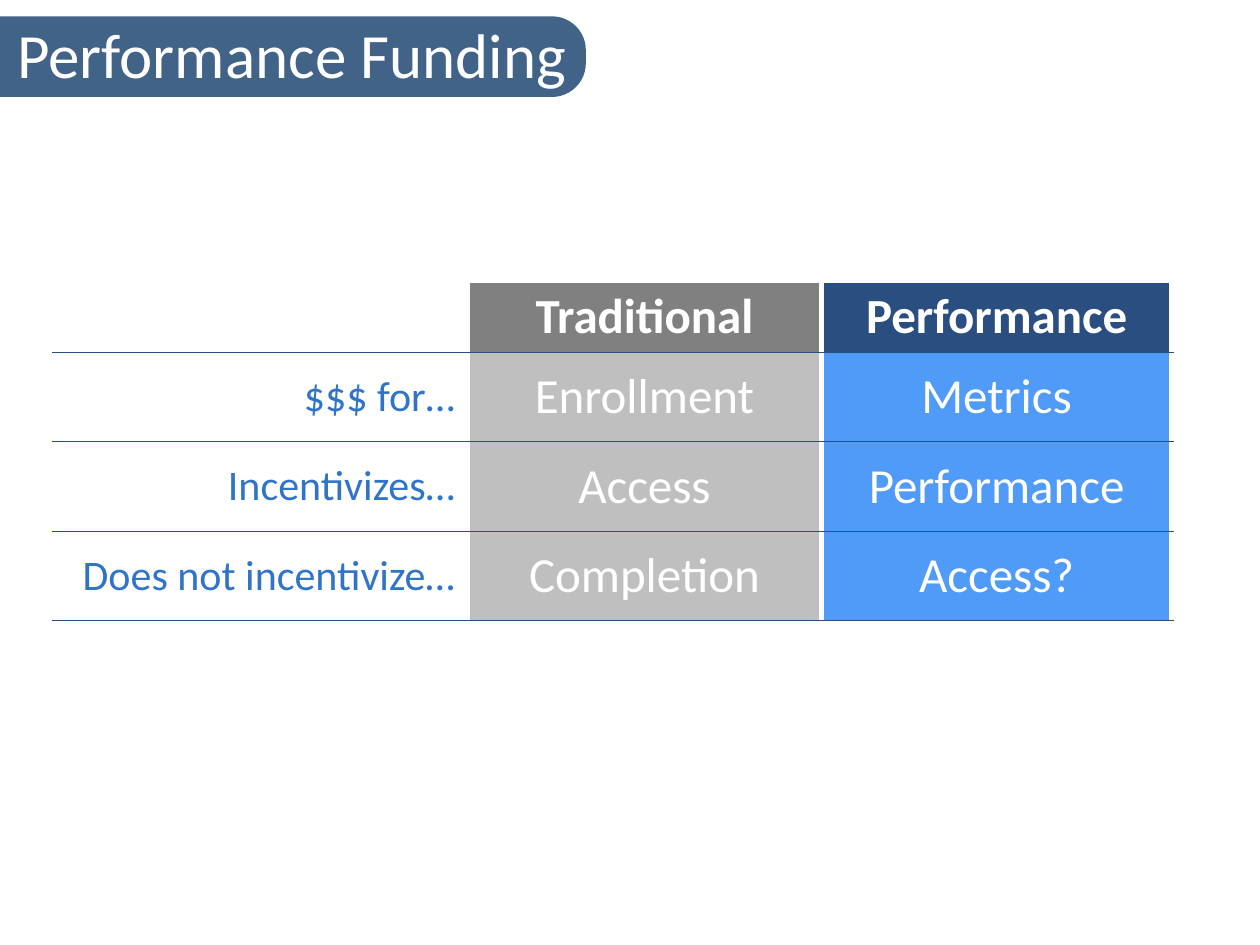
from dataclasses import dataclass
from typing import Optional

from lxml import etree
from pptx import Presentation
from pptx.dml.color import RGBColor
from pptx.enum.shapes import MSO_SHAPE
from pptx.enum.text import MSO_ANCHOR, PP_ALIGN
from pptx.oxml.ns import qn
from pptx.util import Inches, Pt

ROUNDED = MSO_SHAPE.ROUNDED_RECTANGLE
TOP, MIDDLE = MSO_ANCHOR.TOP, MSO_ANCHOR.MIDDLE
LEFT, CENTER, RIGHT = PP_ALIGN.LEFT, PP_ALIGN.CENTER, PP_ALIGN.RIGHT

FONT = "Calibri"
COLORS = {
    "white": "FFFFFF",
    "banner": "1E4672",
    "navy": "294E7F",
    "label": "3074CA",
    "gray": "808080",
    "silver": "BFBFBF",
    "sky": "509AF8",
}
COLUMN_WIDTHS = (3.28, 2.81, 2.78)
ROW_HEIGHTS = (0.27, 0.71, 0.71, 0.71)
ROWS = (
    ("", "Traditional", "Performance"),
    ("$$$ for…", "Enrollment", "Metrics"),
    ("Incentivizes…", "Access", "Performance"),
    ("Does not incentivize…", "Completion", "Access?"),
)


@dataclass(frozen=True)
class CellStyle:
    fill: Optional[str] = None
    color: str = "white"
    size: int = 28
    bold: bool = False
    align: PP_ALIGN = CENTER
    anchor: MSO_ANCHOR = MIDDLE


LABEL = CellStyle(color="label", size=24, align=RIGHT)
HEADER_STYLES = (
    LABEL,
    CellStyle(fill="gray", bold=True, anchor=TOP),
    CellStyle(fill="navy", bold=True, anchor=TOP),
)
BODY_STYLES = (LABEL, CellStyle(fill="silver"), CellStyle(fill="sky"))


def rgb(name: str) -> RGBColor:
    return RGBColor.from_string(COLORS[name])


def write_text(frame, text: str, *, size: int, color: str,
               bold: bool = False, align: PP_ALIGN = LEFT) -> None:
    para = frame.paragraphs[0]
    para.alignment = align
    span = para.add_run()
    span.text = text
    span.font.name = FONT
    span.font.size = Pt(size)
    span.font.bold = bold
    span.font.color.rgb = rgb(color)


def add_borders(cell, top_color: str, top_width: float) -> None:
    borders = (
        ("a:lnL", "white", 3),
        ("a:lnR", "white", 3),
        ("a:lnT", top_color, top_width),
        ("a:lnB", "navy", 0.5),
    )
    properties = cell._tc.get_or_add_tcPr()
    for position, (tag, color, width) in enumerate(borders):
        line = etree.Element(qn(tag), w=str(Pt(width)))
        fill = etree.SubElement(line, qn("a:solidFill"))
        etree.SubElement(fill, qn("a:srgbClr"), val=COLORS[color])
        properties.insert(position, line)


def style_cell(cell, text: str, style: CellStyle) -> None:
    cell.vertical_anchor = style.anchor
    if style.fill:
        cell.fill.solid()
        cell.fill.fore_color.rgb = rgb(style.fill)
    else:
        cell.fill.background()
    if text:
        write_text(cell.text_frame, text, size=style.size, color=style.color,
                   bold=style.bold, align=style.align)


def add_title(page, text: str) -> None:
    banner = page.shapes.add_shape(
        ROUNDED, Inches(-0.51), Inches(0.13), Inches(5.16), Inches(0.64))
    banner.adjustments[0] = 0.42
    banner.shadow.inherit = False
    banner.line.fill.background()
    banner.fill.solid()
    banner.fill.fore_color.rgb = rgb("banner")
    shade = banner._element.spPr.find(".//" + qn("a:srgbClr"))
    etree.SubElement(shade, qn("a:alpha"), val="84000")

    box = page.shapes.add_textbox(
        Inches(0.04), Inches(0.07), Inches(7.77), Inches(0.71))
    box.text_frame.word_wrap = True
    write_text(box.text_frame, text, size=36, color="white")


def add_comparison(page) -> None:
    table = page.shapes.add_table(
        len(ROWS), len(COLUMN_WIDTHS), Inches(0.43), Inches(2.23),
        Inches(sum(COLUMN_WIDTHS)), Inches(sum(ROW_HEIGHTS))).table
    table.first_row = False
    table.horz_banding = False
    for column, width in zip(table.columns, COLUMN_WIDTHS):
        column.width = Inches(width)
    for index, (row, height, texts) in enumerate(zip(table.rows, ROW_HEIGHTS, ROWS)):
        row.height = Inches(height)
        styles = BODY_STYLES if index else HEADER_STYLES
        top = ("navy", 0.5) if index else ("white", 3)
        for cell, text, style in zip(row.cells, texts, styles):
            style_cell(cell, text, style)
            add_borders(cell, *top)


def main() -> None:
    deck = Presentation()
    deck.slide_width = Inches(10)
    deck.slide_height = Inches(7.5)
    page = deck.slides.add_slide(deck.slide_layouts[6])
    add_title(page, "Performance Funding")
    add_comparison(page)
    deck.save("out.pptx")


if __name__ == "__main__":
    main()
